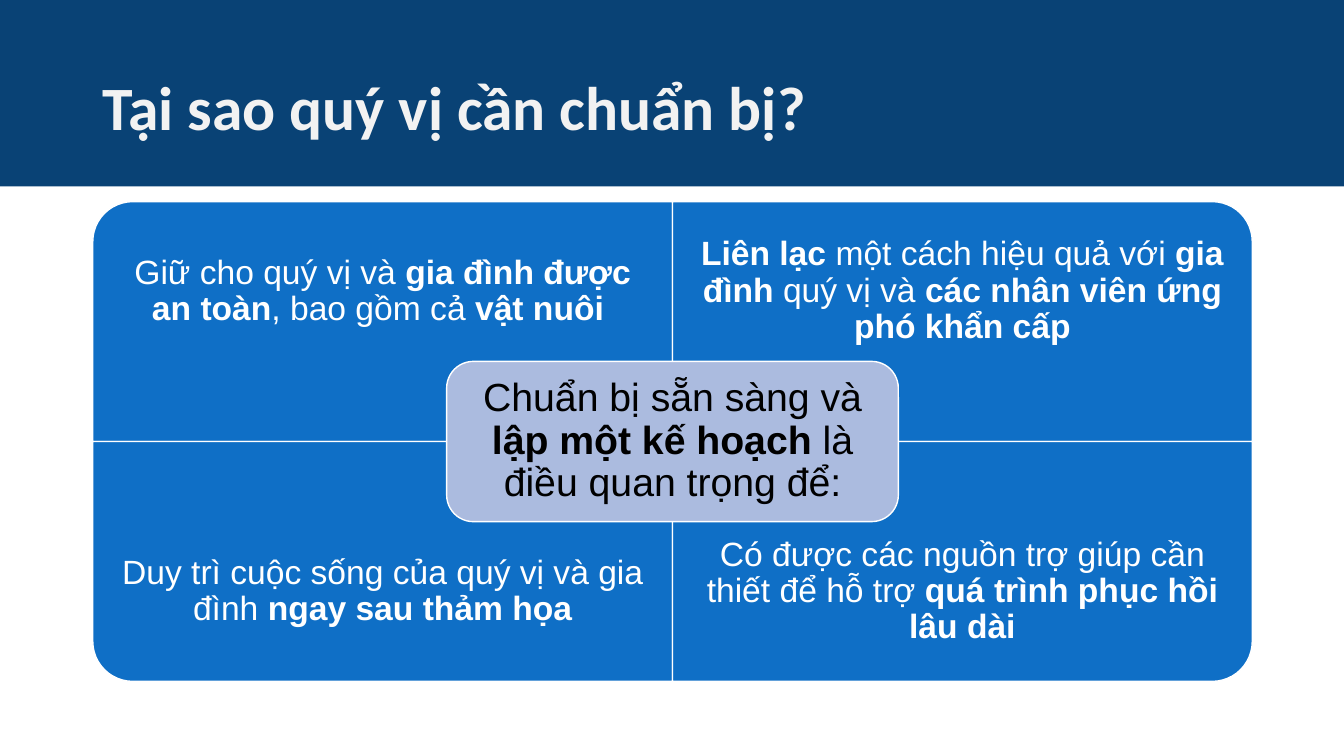
"""Build the slide on why a household should prepare."""
from pptx import Presentation
from pptx.dml.color import RGBColor
from pptx.enum.shapes import MSO_SHAPE
from pptx.enum.text import MSO_ANCHOR, PP_ALIGN
from pptx.util import Inches, Pt

TITLE = [("Tại sao quý vị cần chuẩn bị?", True)]
CENTER = [("Chuẩn bị sẵn sàng và ", False), ("lập một kế hoạch ", True),
          ("là điều quan trọng để:", False)]
REASONS = [
    (270, [("Giữ cho quý vị và ", False), ("gia đình được an toàn", True),
           (", bao gồm cả ", False), ("vật nuôi ", True)]),
    (0, [("Liên lạc", True), (" một cách hiệu quả với ", False),
         ("gia đình", True), (" quý vị và ", False),
         ("các nhân viên ứng phó khẩn cấp", True)]),
    (180, [("Duy trì cuộc sống của quý vị và gia đình ", False),
           ("ngay sau thảm họa", True)]),
    (90, [("Có được các nguồn trợ giúp cần thiết để hỗ trợ ", False),
          ("quá trình phục hồi lâu dài", True)]),
]
COLORS = {"band": "094275", "tile": "0F6FC6", "hub": "ABBBDF",
          "white": "FFFFFF", "black": "000000", "title": "F2F2F2"}
WIDE, HIGH = 13.33, 7.5
LEFT, TOP, TILE_W, TILE_H = 0.92, 2, 5.75, 2.38
TEXT_H = 1.78
HUB_W, HUB_H, HUB_PAD = 4.48, 1.59, 0.08


def color(name):
    """Return the named colour."""
    return RGBColor.from_string(COLORS[name])


def add_box(slide, kind, box, fill, edge=None, turn=0):
    """Add a filled shape, turned about its centre to cover the box."""
    x, y, w, h = box
    if turn % 180:
        x, y, w, h = x + (w - h) / 2, y + (h - w) / 2, h, w
    shape = slide.shapes.add_shape(kind, *map(Inches, (x, y, w, h)))
    shape.rotation = turn
    shape.shadow.inherit = False
    shape.fill.solid()
    shape.fill.fore_color.rgb = color(fill)
    if edge:
        shape.line.color.rgb = color(edge)
        shape.line.width = Pt(1)
    else:
        shape.line.fill.background()


def add_text(slide, box, runs, size, ink, pad=None, face="Arial",
             align=PP_ALIGN.CENTER):
    """Add a paragraph of plain and bold runs, centred in height."""
    frame = slide.shapes.add_textbox(*map(Inches, box)).text_frame
    frame.word_wrap = True
    frame.vertical_anchor = MSO_ANCHOR.MIDDLE
    if pad:
        frame.margin_left = frame.margin_right = Inches(pad)
        frame.margin_top = frame.margin_bottom = Inches(pad)
    para = frame.paragraphs[0]
    para.alignment = align
    para.line_spacing = 0.9
    para.font.name = face
    para.font.size = Pt(size)
    para.font.color.rgb = color(ink)
    for text, bold in runs:
        run = para.add_run()
        run.text = text
        run.font.bold = bold


def main():
    """Draw the title band, four reasons and the central message."""
    deck = Presentation()
    deck.slide_width, deck.slide_height = Inches(WIDE), Inches(HIGH)
    slide = deck.slides.add_slide(deck.slide_layouts[6])

    add_box(slide, MSO_SHAPE.RECTANGLE, (0, 0, WIDE, 1.85), "band")
    add_text(slide, (LEFT, 0.4, 2 * TILE_W, 1.4), TITLE, 44, "title",
             face="Calibri", align=PP_ALIGN.LEFT)

    for i, (turn, runs) in enumerate(REASONS):
        row, col = divmod(i, 2)
        x, y = LEFT + col * TILE_W, TOP + row * TILE_H
        add_box(slide, MSO_SHAPE.ROUND_1_RECTANGLE, (x, y, TILE_W, TILE_H),
                "tile", "white", turn)
        add_text(slide, (x, y + row * (TILE_H - TEXT_H), TILE_W, TEXT_H),
                 runs, 24, "white", 0.19)

    x, y = LEFT + TILE_W - HUB_W / 2, TOP + TILE_H - HUB_H / 2
    add_box(slide, MSO_SHAPE.ROUNDED_RECTANGLE, (x, y, HUB_W, HUB_H),
            "hub", "white")
    add_text(slide, (x + HUB_PAD, y + HUB_PAD, HUB_W - 2 * HUB_PAD,
                     HUB_H - 2 * HUB_PAD), CENTER, 28, "black", 0.12)
    deck.save("out.pptx")


if __name__ == "__main__":
    main()
